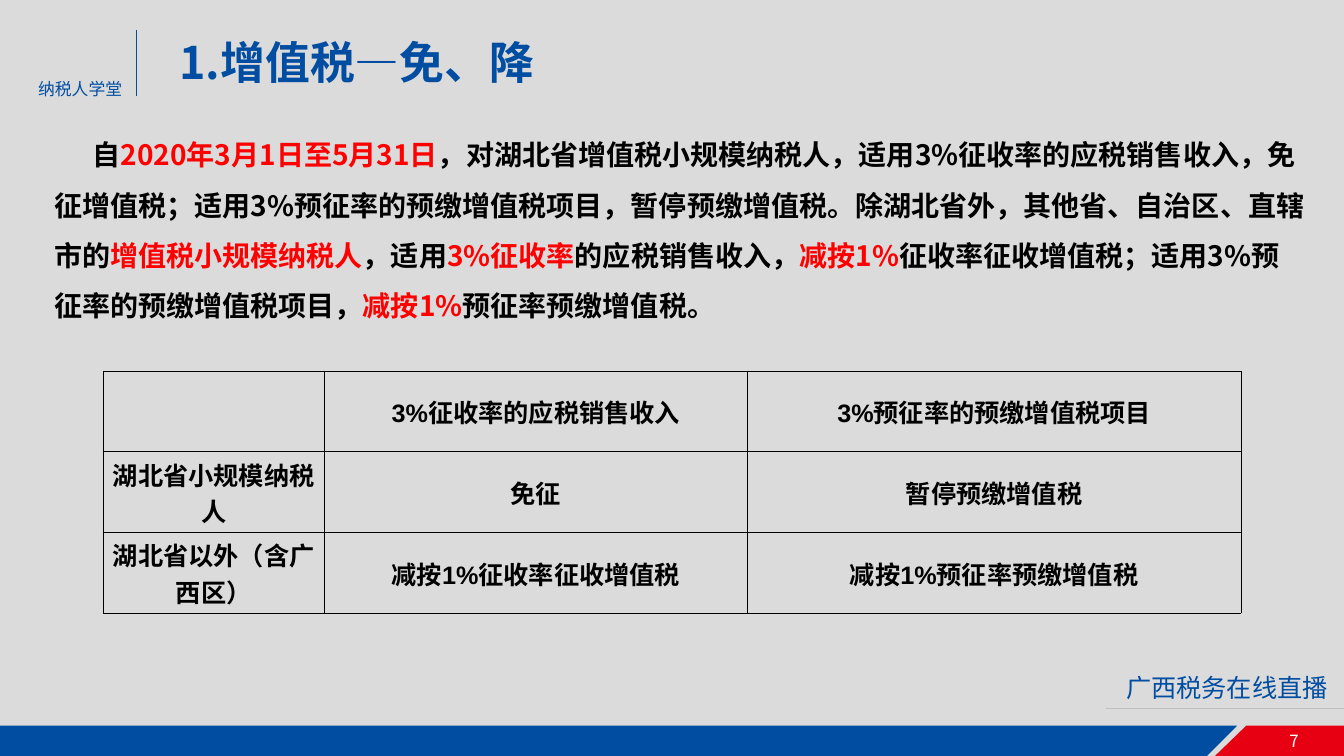
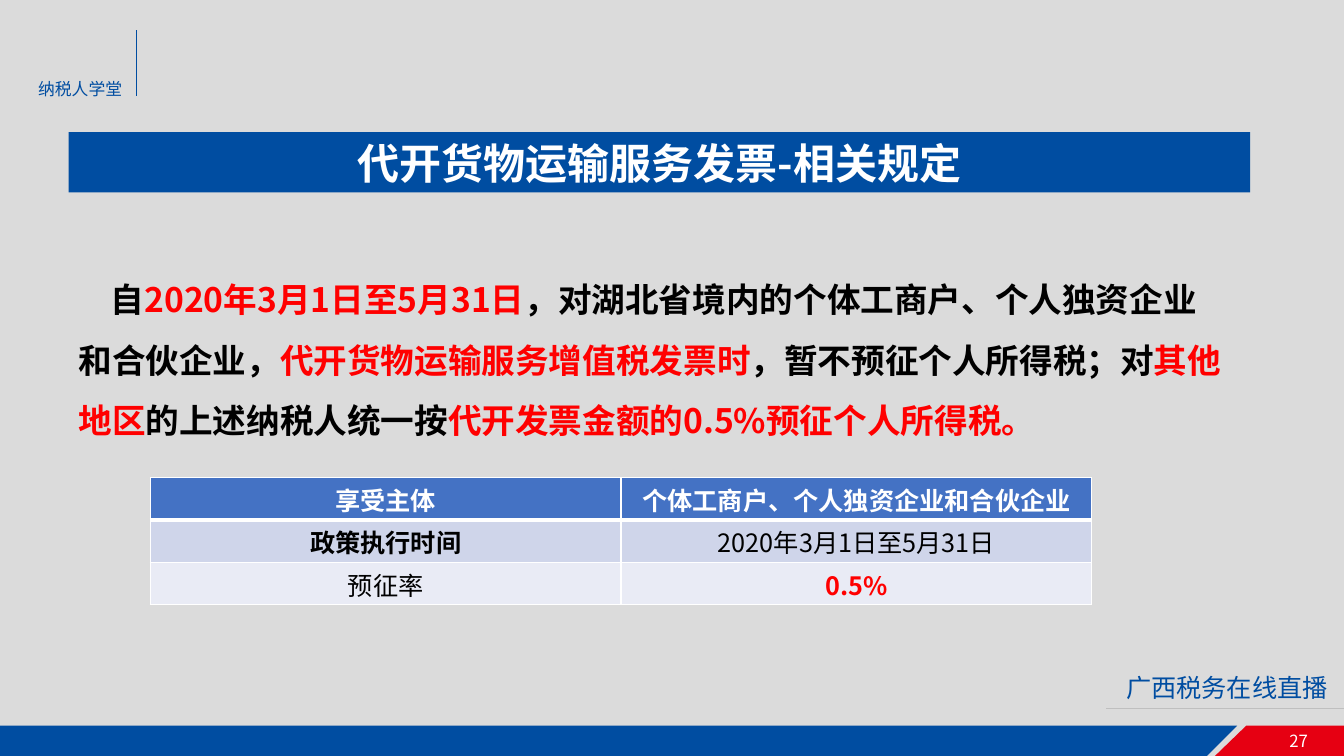
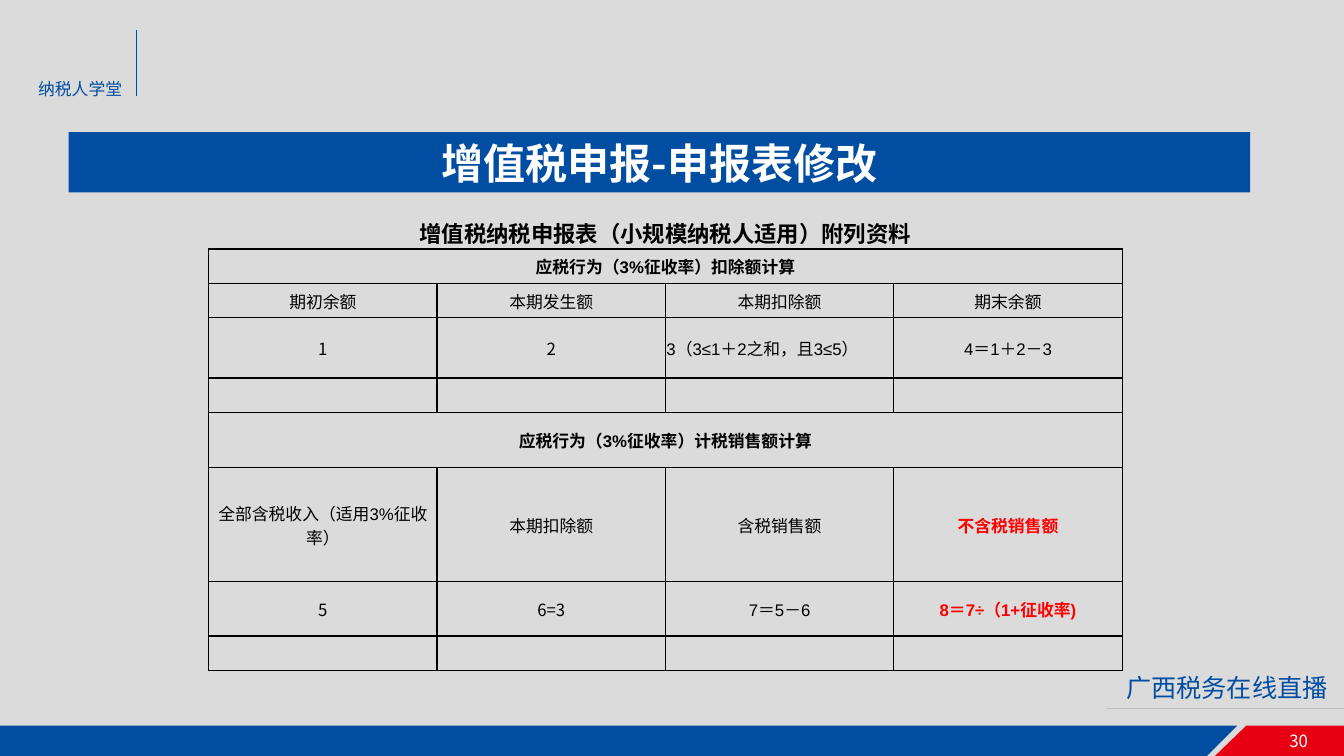
from lxml.etree import SubElement
from pptx import Presentation
from pptx.dml.color import RGBColor
from pptx.enum.text import MSO_ANCHOR as ANCHOR, MSO_AUTO_SIZE as AUTO, PP_ALIGN as ALIGN
from pptx.oxml import parse_xml
from pptx.oxml.ns import nsdecls, qn
from pptx.util import Inches, Pt

rgb = RGBColor.from_string
BLUE, RED, GREY, RULE = "004DA1", "E60012", "DBDBDB", "BFBFBF"
BLACK, WHITE, MARK = "000000", "FFFFFF", "FF0000"
CJK, LATIN = "Noto Sans CJK SC", "Arial"
W, H = 13.33, 7.5
BAND_TOP = 7.2


def add_runs(p, runs, size, bold=False, font=CJK):
    """Write (text, colour) pairs into one paragraph."""
    for text, color in runs:
        r = p.add_run()
        r.text = text
        r.font.size, r.font.bold, r.font.name = Pt(size), bold, font
        r.font.color.rgb = rgb(color)
        SubElement(r.font._element, qn("a:ea"), typeface=CJK)


def add_grid(s, left, top, cols, heights, rows, styles, rules, line, fills=None):
    """Draw a table; a row with one cell spans all columns, rules are line widths."""
    shape = s.shapes.add_table(len(heights), len(cols), Inches(left), Inches(top),
                               Inches(sum(cols)), Inches(sum(heights)))
    table = shape.table
    table.first_row = table.horz_banding = False
    for column, width in zip(table.columns, cols):
        column.width = Inches(width)
    for i, (height, row) in enumerate(zip(heights, rows)):
        table.rows[i].height = Inches(height)
        if len(row) == 1:
            table.cell(i, 0).merge(table.cell(i, len(cols) - 1))
        side = rules[-1] if rules[i] else 0
        for j in range(len(cols)):
            cell = table.cell(i, j)
            cell.vertical_anchor = ANCHOR.MIDDLE
            cell.margin_left = cell.margin_right = Inches(0.01)
            cell.margin_top, cell.margin_bottom = Inches(0.01), 0
            if fills:
                cell.fill.solid()
                cell.fill.fore_color.rgb = rgb(fills[i])
            else:
                cell.fill.background()
            p = cell.text_frame.paragraphs[0]
            text, name = row[j] if j < len(row) else ("", "plain")
            style = dict(styles[name])
            color = style.pop("color", BLACK)
            p.alignment = style.pop("align", ALIGN.CENTER)
            if text:
                add_runs(p, [(text, color)], **style)
            else:
                SubElement(p._p, qn("a:endParaRPr"), sz=str(style["size"] * 100))
            # Borders come before the fill in the cell properties
            edges = zip("LRTB", (side, side, rules[i], rules[i + 1]))
            for k, (edge, width) in enumerate(edges):
                paint = (f'<a:solidFill><a:srgbClr val="{line}"/></a:solidFill>'
                         if width else "<a:noFill/>")
                cell._tc.get_or_add_tcPr().insert(k, parse_xml(
                    f'<a:ln{edge} {nsdecls("a")} w="{Pt(width)}">{paint}</a:ln{edge}>'))


prs = Presentation()
prs.slide_width, prs.slide_height = Inches(W), Inches(H)
layout = prs.slide_layouts[5]
layout.background.fill.solid()
layout.background.fill.fore_color.rgb = rgb(GREY)
for ph in list(layout.placeholders)[1:]:
    ph.element.getparent().remove(ph.element)

# Slides with title and page number
slides = []
for number, title, banner in [
    (7, "1.增值税—免、降", False),
    (27, "代开货物运输服务发票-相关规定", True),
    (30, "增值税申报-申报表修改", True),
]:
    s = prs.slides.add_slide(layout)
    slides.append(s)
    sp = s.shapes.title
    box = (0.68, 1.31, 11.72, 0.6) if banner else (1.68, 0.29, 6.99, 0.64)
    sp.left, sp.top, sp.width, sp.height = map(Inches, box)
    tf = sp.text_frame
    tf.auto_size, tf.vertical_anchor = AUTO.NONE, ANCHOR.MIDDLE
    p = tf.paragraphs[0]
    if banner:
        sp.fill.solid()
        sp.fill.fore_color.rgb = rgb(BLUE)
    p.alignment = ALIGN.CENTER if banner else ALIGN.LEFT
    add_runs(p, [(title, WHITE if banner else BLUE)], 30 if banner else 32, True)

# Shared frame: drawn once, then moved to the layout
s = slides[0]
frame = []
for color, points in [
    (BLUE, [(0, BAND_TOP), (12.27, BAND_TOP), (11.97, H), (0, H)]),
    (RED, [(12.36, BAND_TOP), (W, BAND_TOP), (W, H), (12.05, H)]),
]:
    start, *rest = [(x * 100, y * 100) for x, y in points]
    builder = s.shapes.build_freeform(*start, scale=Inches(0.01))
    builder.add_line_segments(rest)
    sp = builder.convert_to_shape()
    sp.shadow.inherit = False
    sp.fill.solid()
    sp.fill.fore_color.rgb = rgb(color)
    sp.line.fill.background()
    frame.append(sp)
for color, ends in [(BLUE, (1.35, 0.3, 1.35, 0.95)), (RULE, (10.97, 7.03, W, 7.03))]:
    sp = s.shapes.add_connector(1, *map(Inches, ends))
    sp.line.color.rgb, sp.line.width = rgb(color), Pt(0.5)
    SubElement(sp.element.spPr, qn("a:effectLst"))
    frame.append(sp)
for text, size, box in [("纳税人学堂", 12, (0.28, 0.73, 1.08, 0.3)),
                        ("广西税务在线直播", 18, (11.07, 6.62, 2.26, 0.4))]:
    sp = s.shapes.add_textbox(*map(Inches, box))
    sp.text_frame.word_wrap = False
    sp.text_frame.vertical_anchor = ANCHOR.MIDDLE
    add_runs(sp.text_frame.paragraphs[0], [(text, BLUE)], size)
    frame.append(sp)
for sp in frame:
    layout.shapes.element.append(sp.element)

# Page numbers
for s, number in zip(slides, (7, 27, 30)):
    sp = s.shapes.add_textbox(Inches(12.69), Inches(BAND_TOP), Inches(0.54), Inches(0.3))
    sp.text_frame.vertical_anchor = ANCHOR.MIDDLE
    add_runs(sp.text_frame.paragraphs[0], [(str(number), WHITE)], 12)

# Policy paragraphs of the first two slides
vat_text = [
    ("自", BLACK), ("2020年3月1日至5月31日", MARK),
    ("，对湖北省增值税小规模纳税人，适用3%征收率的应税销售收入，免征增值税；"
     "适用3%预征率的预缴增值税项目，暂停预缴增值税。除湖北省外，其他省、自治区、直辖市的", BLACK),
    ("增值税小规模纳税人", MARK), ("，适用", BLACK), ("3%征收率", MARK),
    ("的应税销售收入，", BLACK), ("减按1%", MARK),
    ("征收率征收增值税；适用3%预征率的预缴增值税项目，", BLACK),
    ("减按1%", MARK), ("预征率预缴增值税。", BLACK),
]
freight_text = [
    ("自", BLACK), ("2020年3月1日至5月31日", MARK),
    ("，对湖北省境内的个体工商户、个人独资企业和合伙企业，", BLACK),
    ("代开货物运输服务增值税发票时", MARK), ("，暂不预征个人所得税；对", BLACK),
    ("其他地区", MARK), ("的上述纳税人统一按", BLACK),
    ("代开发票金额的0.5%预征个人所得税。", MARK),
]
for s, runs, size, indent, box in [
    (slides[0], vat_text, 20, 0.38, (0.44, 1.15, 12.6, 2.1)),
    (slides[1], freight_text, 24, 0.32, (0.68, 2.52, 11.62, 1.9)),
]:
    tf = s.shapes.add_textbox(*map(Inches, box)).text_frame
    tf.word_wrap = True
    p = tf.paragraphs[0]
    p.line_spacing = Pt(size * 1.8)
    p._p.get_or_add_pPr().set("indent", str(Inches(indent)))
    add_runs(p, runs, size, True)

# Slide 1: rates by region
add_grid(
    slides[0], 1.02, 3.68, [2.2, 4.19, 4.9], [0.8] * 3,
    [[(text, "plain") for text in row] for row in [
        ("", "3%征收率的应税销售收入", "3%预征率的预缴增值税项目"),
        ("湖北省小规模纳税人", "免征", "暂停预缴增值税"),
        ("湖北省以外（含广西区）", "减按1%征收率征收增值税", "减按1%预征率预缴增值税"),
    ]],
    {"plain": dict(size=18, bold=True, font=LATIN)}, [0.5] * 4, BLACK)

# Slide 2: who, when and how much
add_grid(
    slides[1], 1.49, 4.74, [4.67] * 2, [0.42] * 3,
    [[("享受主体", "head"), ("个体工商户、个人独资企业和合伙企业", "head")],
     [("政策执行时间", "bold"), ("2020年3月1日至5月31日", "plain")],
     [("预征率", "plain"), ("0.5%", "mark")]],
    {"plain": dict(size=18), "bold": dict(size=18, bold=True),
     "head": dict(size=18, bold=True, color=WHITE),
     "mark": dict(size=18, bold=True, color=MARK)},
    [1, 3, 1, 1], WHITE, ["4472C4", "CFD5EA", "E9EBF5"])

# Slide 3: tax return form
blank = [("", "plain")] * 4
add_grid(
    slides[2], 2.07, 2.13, [2.265] * 4,
    [0.34, 0.34, 0.34, 0.6, 0.34, 0.55, 1.13, 0.54, 0.34],
    [[("增值税纳税申报表（小规模纳税人适用）附列资料", "caption")],
     [("应税行为（3%征收率）扣除额计算", "bold")],
     [(text, "plain") for text in ("期初余额", "本期发生额", "本期扣除额", "期末余额")],
     [("1", "cjk"), ("2", "cjk"), ("3（3≤1＋2之和，且3≤5）", "left"), ("4＝1＋2－3", "plain")],
     blank,
     [("应税行为（3%征收率）计税销售额计算", "bold")],
     [("全部含税收入（适用3%征收率）", "plain"), ("本期扣除额", "plain"),
      ("含税销售额", "plain"), ("不含税销售额", "mark")],
     [("5", "cjk"), ("6=3", "cjk"), ("7＝5－6", "plain"), ("8＝7÷（1+征收率)", "mark")],
     blank],
    {"plain": dict(size=12, font=LATIN), "cjk": dict(size=12),
     "left": dict(size=12, font=LATIN, align=ALIGN.LEFT),
     "bold": dict(size=12, font=LATIN, bold=True),
     "caption": dict(size=16, font=LATIN, bold=True),
     "mark": dict(size=12, font=LATIN, bold=True, color=MARK)},
    [0] + [1] * 9, BLACK)

prs.save("out.pptx")
